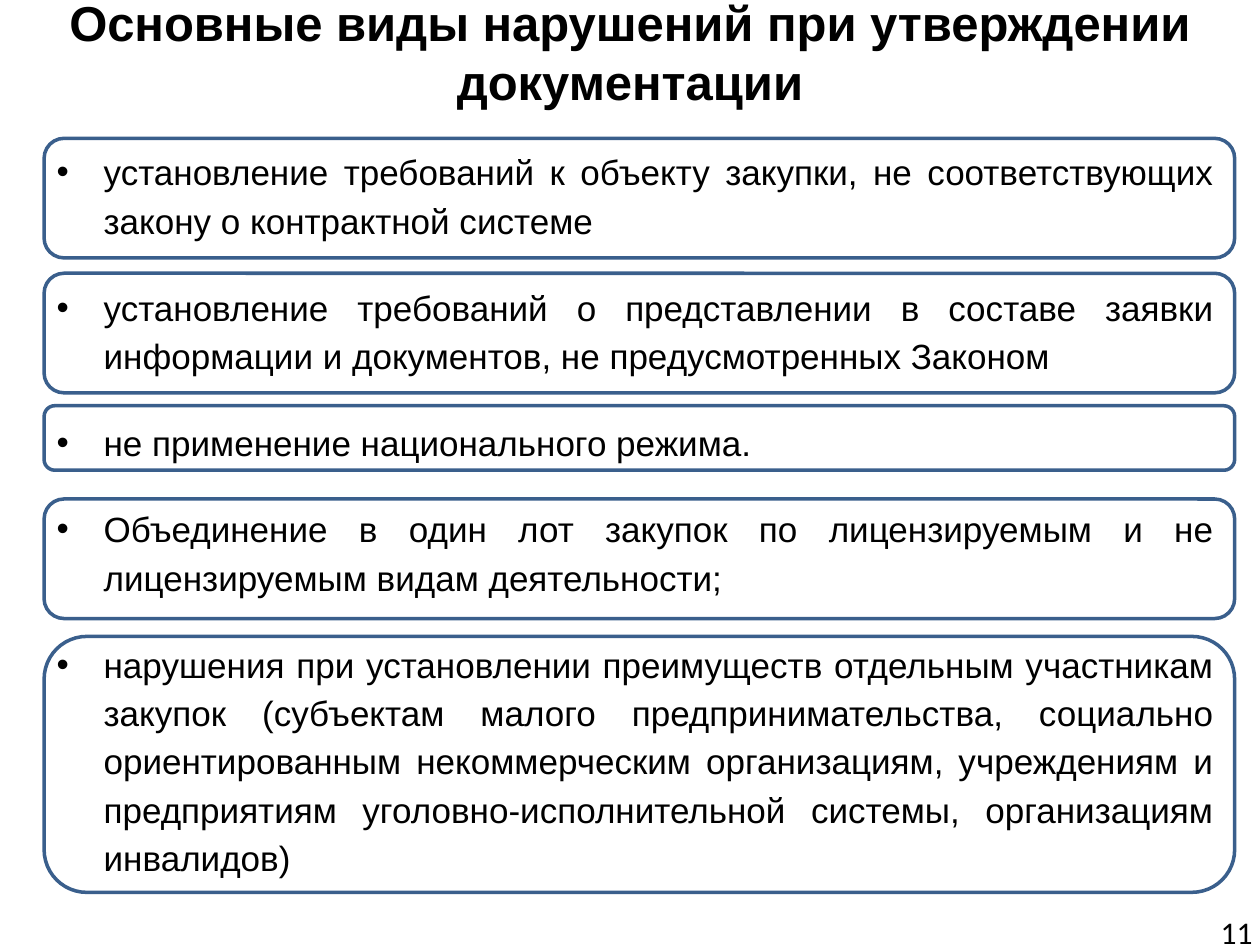
from dataclasses import dataclass

import pptx
import pptx.dml.color
import pptx.enum.shapes
import pptx.enum.text
import pptx.oxml.ns
import pptx.util
from lxml import etree

Cm, Pt = pptx.util.Cm, pptx.util.Pt
PP_ALIGN = pptx.enum.text.PP_ALIGN
COLORS = {"text": "000000", "frame": "3A5F8C"}
LEFT, FRAME_WIDTH = 0.89, 24.0
INDENT = 0.95


@dataclass
class Violation:
    text: str
    top: float
    height: float


VIOLATIONS = [
    Violation("установление требований к объекту закупки, не соответствующих "
              "закону о контрактной системе", 2.79, 2.41),
    Violation("установление требований о представлении в составе заявки "
              "информации и документов, не предусмотренных Законом", 5.51, 2.41),
    Violation("не применение национального режима.", 8.18, 1.3),
    Violation("Объединение в один лот закупок по лицензируемым и не "
              "лицензируемым видам деятельности;", 10.06, 2.41),
    Violation("нарушения при установлении преимуществ отдельным участникам "
              "закупок (субъектам малого предпринимательства, социально "
              "ориентированным некоммерческим организациям, учреждениям и "
              "предприятиям уголовно-исполнительной системы, организациям "
              "инвалидов)", 12.83, 5.16),
]


def rgb(name: str) -> pptx.dml.color.RGBColor:
    return pptx.dml.color.RGBColor.from_string(COLORS[name])


def place(sp, left: float, top: float, width: float, height: float) -> None:
    sp.left, sp.top, sp.width, sp.height = map(Cm, (left, top, width, height))


def setup_frame(tf) -> None:
    tf.word_wrap = True
    tf.auto_size = pptx.enum.text.MSO_AUTO_SIZE.NONE
    tf.vertical_anchor = pptx.enum.text.MSO_ANCHOR.TOP


def add_run(p, text: str, size: float, font: str = "Arial", bold: bool = False) -> None:
    r = p.add_run()
    r.text = text
    r.font.size, r.font.name, r.font.bold = Pt(size), font, bold
    r.font.color.rgb = rgb("text")


def add_bullet(p) -> None:
    """Give the paragraph a round bullet with a hanging indent."""
    pPr = p._p.get_or_add_pPr()
    pPr.set("marL", str(Cm(INDENT)))
    pPr.set("indent", str(-Cm(INDENT)))
    qn = pptx.oxml.ns.qn
    etree.SubElement(pPr, qn("a:buFont")).set("typeface", "Arial")
    etree.SubElement(pPr, qn("a:buChar")).set("char", "•")


def add_title(s, text: str) -> None:
    sp = s.shapes.title
    place(sp, 0, -0.28, 25.4, 1.75)
    setup_frame(sp.text_frame)
    p = sp.text_frame.paragraphs[0]
    p.alignment = PP_ALIGN.CENTER
    add_run(p, text, 28, bold=True)


def add_page_number(s, number: str) -> None:
    sp = s.shapes.add_textbox(Cm(19.58), Cm(18.29), Cm(5.92), Cm(0.84))
    setup_frame(sp.text_frame)
    p = sp.text_frame.paragraphs[0]
    p.alignment = PP_ALIGN.RIGHT
    add_run(p, number, 18, "Calibri")


def add_violation_list(s, violations: list[Violation]) -> None:
    sp = s.shapes.add_textbox(Cm(LEFT), Cm(2.79), Cm(23.83), Cm(15.2))
    tf = sp.text_frame
    setup_frame(tf)
    for i, violation in enumerate(violations):
        p = tf.add_paragraph() if i else tf.paragraphs[0]
        add_bullet(p)
        p.alignment = PP_ALIGN.JUSTIFY
        p.line_spacing = 1.15
        if i:
            p.space_before = Pt(22)
        add_run(p, violation.text, 20)


def add_frame(s, violation: Violation) -> None:
    sp = s.shapes.add_shape(
        pptx.enum.shapes.MSO_SHAPE.ROUNDED_RECTANGLE,
        Cm(LEFT), Cm(violation.top), Cm(FRAME_WIDTH), Cm(violation.height))
    sp.shadow.inherit = False
    sp.fill.background()
    sp.line.color.rgb = rgb("frame")
    sp.line.width = Pt(2)


def main() -> None:
    prs = pptx.Presentation()
    prs.slide_width, prs.slide_height = Cm(25.4), Cm(19.05)
    s = prs.slides.add_slide(prs.slide_layouts[5])
    add_title(s, "Основные виды нарушений при утверждении документации")
    add_page_number(s, "11")
    add_violation_list(s, VIOLATIONS)
    for violation in VIOLATIONS:
        add_frame(s, violation)
    prs.save("out.pptx")


if __name__ == "__main__":
    main()
